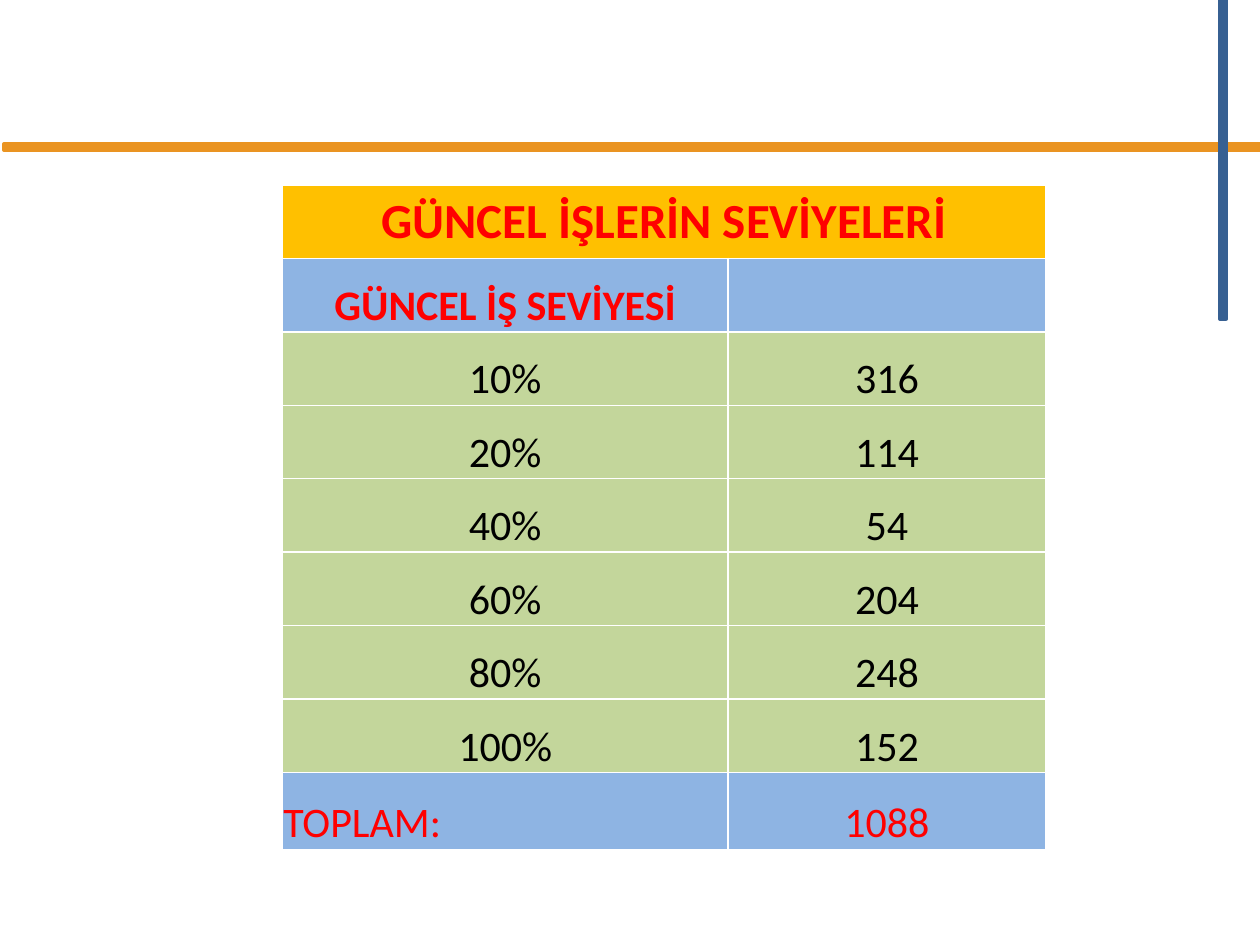
from pptx import Presentation
from pptx import util as u
from pptx.dml.color import RGBColor
from pptx.enum import shapes, text


def paint(fill, color):
    fill.solid()
    fill.fore_color.rgb = RGBColor.from_string(color)


deck = Presentation()
deck.slide_width, deck.slide_height = u.Cm(25.4), u.Cm(19.05)
slide = deck.slides.add_slide(deck.slide_layouts[6])

# Crossing bars: left, top, width, height, colour
for *place, color in [
    (0.08, 2.9, 25.32, 0.13, "EA9422"),
    (24.59, 0, 0.13, 6.43, "376092"),
]:
    bar = slide.shapes.add_shape(
        shapes.MSO_SHAPE.RECTANGLE, *[u.Cm(length) for length in place])
    bar.shadow.inherit = False
    paint(bar.fill, color)
    paint(bar.line.fill, color)
    bar.line.width = u.Pt(2)

# Row formats: cell fill and font values
title = ("FFC000", {"size": u.Pt(28), "bold": True}, "FF0000")
heading = ("8EB4E3", {"size": u.Pt(24), "bold": True}, "FF0000")
level = ("C3D69B", {"size": u.Pt(24), "bold": False}, "000000")
total = ("8EB4E3", {"size": u.Pt(24), "bold": False}, "FF0000")

level_rows = [("10%", "316"), ("20%", "114"), ("40%", "54"),
              ("60%", "204"), ("80%", "248"), ("100%", "152")]
rows = [
    (title, ("GÜNCEL İŞLERİN SEVİYELERİ", "")),
    (heading, ("GÜNCEL İŞ SEVİYESİ", "")),
    *[(level, words) for words in level_rows],
    (total, ("TOPLAM:", "1088")),
]

# Table of work levels
levels = slide.shapes.add_table(
    len(rows), 2, u.Cm(5.69), u.Cm(3.73), u.Cm(15.39), u.Cm(13.39)).table
levels.first_row = levels.horz_banding = False
for column, width in zip(levels.columns, (8.99, 6.4)):
    column.width = u.Cm(width)
for row in levels.rows:
    row.height = u.Cm(1.48)
levels.rows[len(rows) - 1].height = u.Cm(1.55)
levels.cell(0, 0).merge(levels.cell(0, 1))

cell_format = {
    "margin_left": u.Cm(0.02), "margin_right": u.Cm(0.02),
    "margin_top": u.Cm(0.02), "margin_bottom": 0,
    "vertical_anchor": text.MSO_ANCHOR.BOTTOM,
}
for r, ((fill, font_format, color), words) in enumerate(rows):
    for c, word in enumerate(words):
        cell = levels.cell(r, c)
        paint(cell.fill, fill)
        for name, value in cell_format.items():
            setattr(cell, name, value)
        if not word:
            continue
        line = cell.text_frame.paragraphs[0]
        line.alignment = text.PP_ALIGN.CENTER
        run = line.add_run()
        run.text = word
        for name, value in {"name": "Calibri", **font_format}.items():
            setattr(run.font, name, value)
        run.font.color.rgb = RGBColor.from_string(color)

# The title sits mid-cell, the total label at the left
levels.cell(0, 0).vertical_anchor = text.MSO_ANCHOR.MIDDLE
total_label = levels.cell(len(rows) - 1, 0).text_frame.paragraphs[0]
total_label.alignment = text.PP_ALIGN.LEFT

deck.save("out.pptx")
